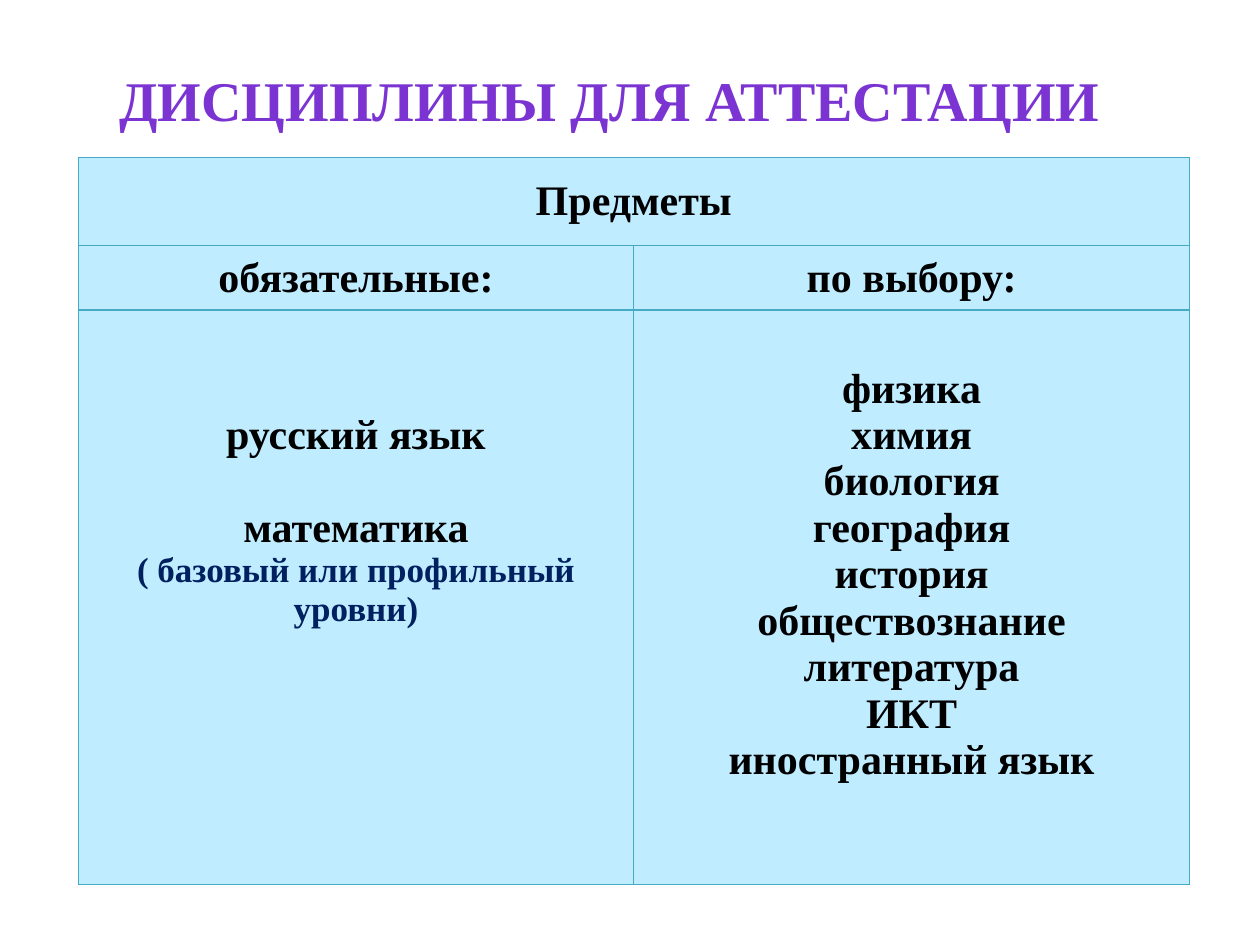
from lxml.etree import SubElement
from pptx import Presentation
from pptx.dml.color import RGBColor
from pptx.enum.text import MSO_ANCHOR as Anchor, PP_ALIGN as Align
from pptx.oxml.ns import qn
from pptx.util import Inches, Pt

PURPLE = RGBColor(0x7B, 0x34, 0xD2)
BLACK = RGBColor(0x00, 0x00, 0x00)
NAVY = RGBColor(0x00, 0x20, 0x60)
PALE_BLUE = RGBColor(0xBF, 0xEC, 0xFF)
TEAL = RGBColor(0x46, 0xAA, 0xC5)
FONT = "Times New Roman"
ROW_HEIGHTS = (0.7, 0.51, 4.56)
COLUMN_WIDTH = 4.41
CELL_MARGIN = 0.03
REQUIRED = ("русский язык", "математика", "( базовый или профильный уровни)")
ELECTIVE = ("физика", "химия", "биология", "география", "история",
            "обществознание", "литература", "ИКТ", "иностранный язык")


def format_paragraph(para, size, color):
    """Centre a paragraph and set its bold serif font."""
    para.alignment = Align.CENTER
    for span in para.runs:
        span.font.name = FONT
        span.font.size = Pt(size)
        span.font.bold = True
        span.font.color.rgb = color


def add_title(page, text):
    """Add the centred heading above the table."""
    box = page.shapes.add_textbox(Inches(0.31), Inches(0.47), Inches(9.06), Inches(0.64))
    box.text_frame.word_wrap = True
    box.text_frame.text = text
    format_paragraph(box.text_frame.paragraphs[0], 32, PURPLE)


def style_cell(cell):
    """Give a cell its borders, fill, margins and anchor."""
    properties = cell._tc.get_or_add_tcPr()
    for side in ("lnL", "lnR", "lnT", "lnB"):
        line = SubElement(properties, qn(f"a:{side}"), w=str(Pt(0.75)))
        fill = SubElement(line, qn("a:solidFill"))
        SubElement(fill, qn("a:srgbClr"), val=str(TEAL))
    cell.fill.solid()
    cell.fill.fore_color.rgb = PALE_BLUE
    cell.vertical_anchor = Anchor.MIDDLE
    cell.margin_left = cell.margin_right = Inches(CELL_MARGIN)
    cell.margin_top = cell.margin_bottom = Inches(CELL_MARGIN)


def fill_cell(cell, lines, space_below=0):
    """Write one paragraph per line, raised by the space below."""
    cell.text_frame.text = "\n".join(lines)
    cell.margin_bottom = Inches(CELL_MARGIN + space_below)
    for para in cell.text_frame.paragraphs:
        format_paragraph(para, 24, BLACK)


def add_subject_table(page):
    """Add the table of required and elective subjects."""
    frame = page.shapes.add_table(len(ROW_HEIGHTS), 2, Inches(0.62), Inches(1.25),
                                  Inches(2 * COLUMN_WIDTH), Inches(sum(ROW_HEIGHTS)))
    table = frame.table
    for column in table.columns:
        column.width = Inches(COLUMN_WIDTH)
    for row, height in zip(table.rows, ROW_HEIGHTS):
        row.height = Inches(height)
    for cell in table.iter_cells():
        style_cell(cell)
    table.cell(0, 0).merge(table.cell(0, 1))
    fill_cell(table.cell(0, 0), ["Предметы"])
    fill_cell(table.cell(1, 0), ["обязательные:"])
    fill_cell(table.cell(1, 1), ["по выбору:"])
    fill_cell(table.cell(2, 0), REQUIRED, space_below=1.22)
    fill_cell(table.cell(2, 1), ELECTIVE, space_below=0.36)
    _, mathematics, levels = table.cell(2, 0).text_frame.paragraphs
    mathematics.space_before = Pt(26.5)
    format_paragraph(levels, 20, NAVY)


def main():
    """Build and save the slide."""
    deck = Presentation()
    deck.slide_width, deck.slide_height = Inches(10), Inches(7.5)
    page = deck.slides.add_slide(deck.slide_layouts[6])
    add_subject_table(page)
    add_title(page, "ДИСЦИПЛИНЫ ДЛЯ АТТЕСТАЦИИ")
    deck.save("out.pptx")


if __name__ == "__main__":
    main()
